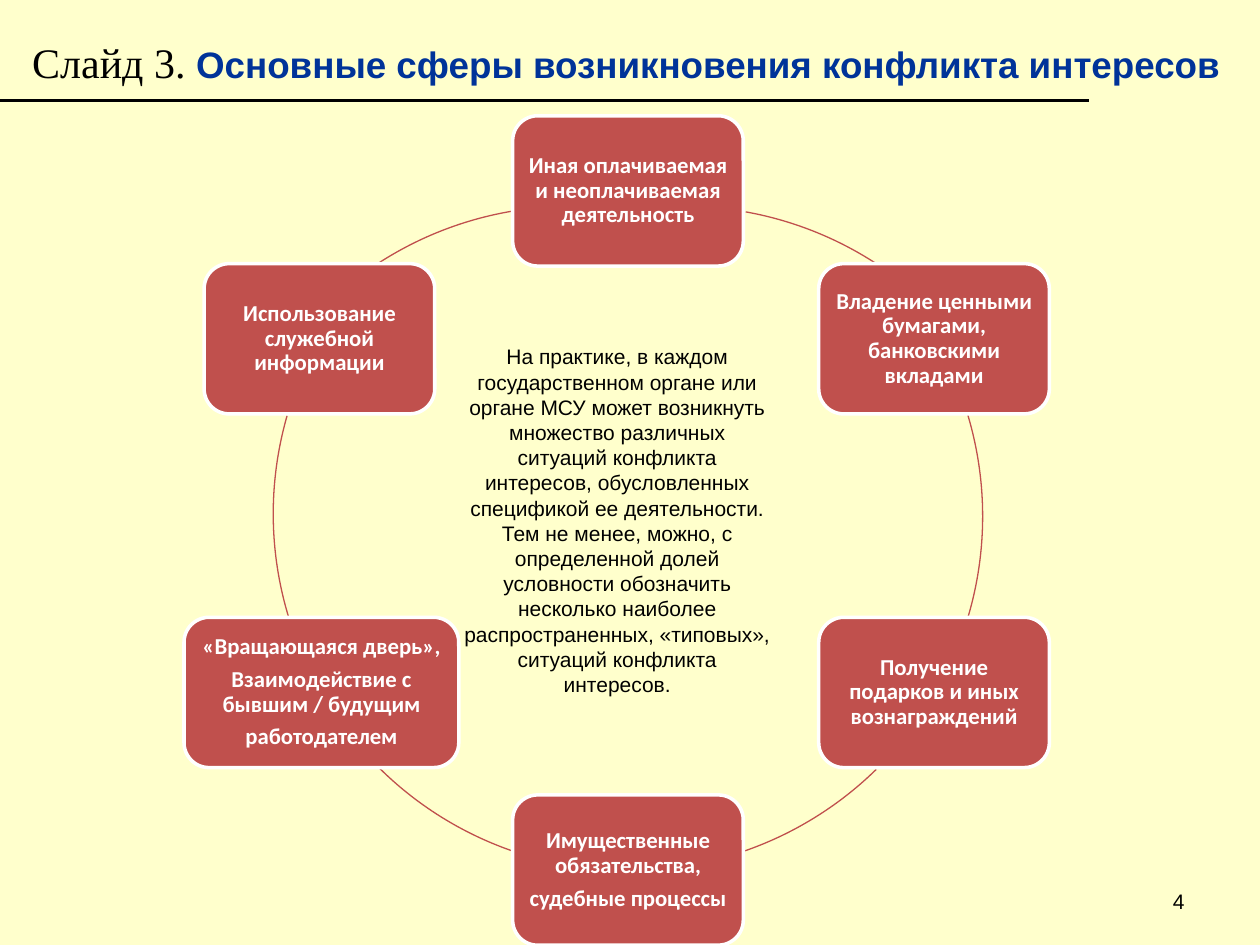
from pptx import Presentation
from pptx.dml.color import RGBColor
from pptx.enum.shapes import MSO_CONNECTOR as Link, MSO_SHAPE as Kind
from pptx.enum.text import MSO_ANCHOR as Anchor, PP_ALIGN as Align
from pptx.oxml.ns import qn
from pptx.util import Cm, Pt
from lxml.etree import SubElement

RED, WHITE, BLACK, BLUE = "C0504D", "FFFFFF", "000000", "003399"


def color(code):
    return RGBColor.from_string(code)


def style(font, name, size, code, bold=False):
    font.name, font.size, font.bold = name, Pt(size), bold
    font.color.rgb = color(code)


deck = Presentation()
deck.slide_width, deck.slide_height = Cm(25.4), Cm(19.05)
slide = deck.slides.add_slide(deck.slide_layouts[6])
slide.background.fill.solid()
slide.background.fill.fore_color.rgb = color("FFFFCC")
shapes = slide.shapes

# Rule under the title
rule = shapes.add_connector(Link.STRAIGHT, 0, Cm(2.03), Cm(21.95), Cm(2.03))
rule.line.color.rgb = color(BLACK)
rule.line.width = Pt(1.5)
SubElement(rule._element.spPr, qn("a:effectLst"))

# Ring: centre x, centre y, start and end angle (clockwise from the right)
radius = 7.14
arcs = [
    (13.77, 11.3, 280.2, 303),
    (12.67, 10.41, 343.4, 16.4),
    (12.67, 10.41, 45.6, 70.9),
    (12.67, 10.41, 109.3, 134.6),
    (12.65, 10.36, 163.2, 196.1),
    (11.51, 11.3, 237, 260.4),
]
for x, y, start, end in arcs:
    arc = shapes.add_shape(Kind.ARC, Cm(x - radius), Cm(y - radius),
                           Cm(2 * radius), Cm(2 * radius))
    # One degree is 60000 units, and adjustments count in 100000 units
    arc.adjustments[0], arc.adjustments[1] = start * 0.6, end * 0.6
    arc.shadow.inherit = False
    arc.fill.background()
    arc.line.color.rgb = color(RED)
    arc.line.width = Pt(0.75)

# Spheres: centre x, centre y, width, paragraphs
high = 3.03
spheres = [
    (12.66, 3.85, 4.65, ["Иная оплачиваемая и неоплачиваемая деятельность"]),
    (18.83, 6.83, 4.65, ["Владение ценными бумагами, банковскими вкладами"]),
    (18.83, 13.96, 4.65, ["Получение подарков и иных вознаграждений"]),
    (12.66, 17.54, 4.65, ["Имущественные обязательства,", "судебные процессы"]),
    (6.48, 13.96, 5.54, ["«Вращающаяся дверь»,",
                         "Взаимодействие с бывшим / будущим", "работодателем"]),
    (6.44, 6.83, 4.65, ["Использование служебной информации"]),
]
for x, y, wide, lines in spheres:
    box = shapes.add_shape(Kind.ROUNDED_RECTANGLE, Cm(x - wide / 2),
                           Cm(y - high / 2), Cm(wide), Cm(high))
    box.shadow.inherit = False
    box.fill.solid()
    box.fill.fore_color.rgb = color(RED)
    box.line.color.rgb = color(WHITE)
    box.line.width = Pt(2)
    frame = box.text_frame
    frame.margin_left = frame.margin_right = Cm(0.13)
    frame.margin_top = frame.margin_bottom = Cm(0.13)
    frame.vertical_anchor = Anchor.MIDDLE
    frame.text = "\n".join(lines)
    for para in frame.paragraphs:
        para.alignment = Align.CENTER
        para.line_spacing = 0.9
        para.space_after = Pt(4.6)
        style(para.font, "Calibri", 13, WHITE, True)

# Title
frame = shapes.add_textbox(Cm(0.18), Cm(0.61), Cm(24.89), Cm(1.27)).text_frame
frame.word_wrap = True
title = frame.paragraphs[0]
title.alignment = Align.CENTER
title.space_before = Pt(4.8)
for text, look in [
    ("Слайд 3. ", ("Times New Roman", 24, BLACK)),
    ("Основные сферы возникновения конфликта интересов", ("Arial", 21, BLUE, True)),
]:
    run = title.add_run()
    run.text = text
    style(run.font, *look)

# Middle note and page number
note = (
    "На практике, в каждом государственном органе или органе МСУ может "
    "возникнуть множество различных ситуаций конфликта интересов, "
    "обусловленных спецификой ее деятельности. Тем не менее, можно, с "
    "определенной долей условности обозначить несколько наиболее "
    "распространенных, «типовых», ситуаций конфликта интересов."
)
for text, area, align, anchor in [
    (note, (9.09, 6.81, 6.71, 7.44), Align.CENTER, Anchor.TOP),
    ("4", (18.21, 17.65, 5.92, 1.02), Align.RIGHT, Anchor.MIDDLE),
]:
    frame = shapes.add_textbox(*map(Cm, area)).text_frame
    frame.word_wrap = True
    frame.vertical_anchor = anchor
    frame.text = text
    para = frame.paragraphs[0]
    para.alignment = align
    style(para.font, "Arial", 12, BLACK)

deck.save("out.pptx")
